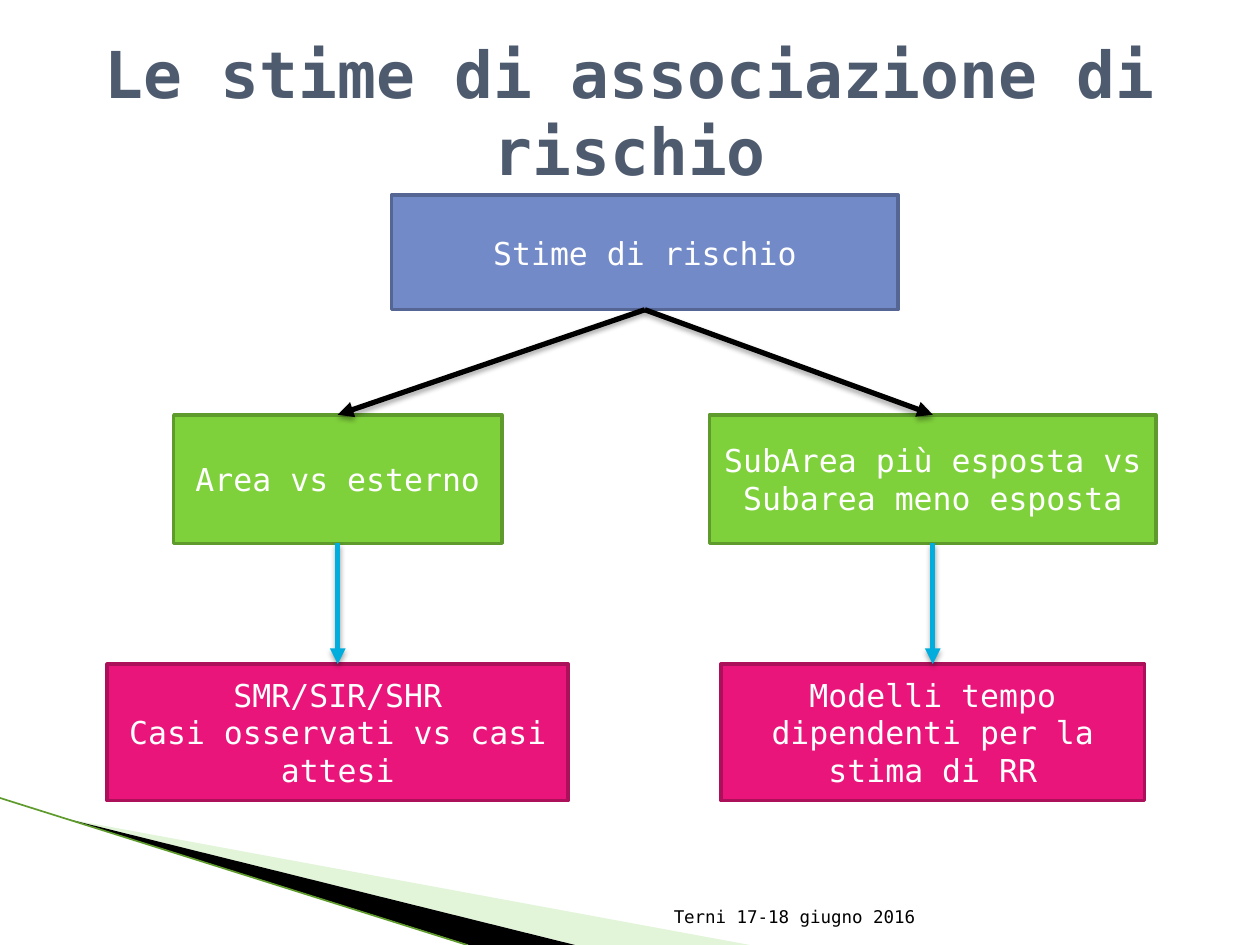
import pptx
import pptx.util
import pptx.dml.color
import pptx.enum.shapes
import pptx.enum.text
import pptx.oxml
import pptx.oxml.ns

Pt = pptx.util.Pt
ALIGN = pptx.enum.text.PP_ALIGN
ANCHOR = pptx.enum.text.MSO_ANCHOR
FONT = "DejaVu Sans Mono"
TOP, BOTTOM = 0, 2  # connection sites of a rectangle

COLORS = {
    "title": "4E5B6F", "black": "000000", "white": "FFFFFF",
    "root": "738AC8", "root_edge": "556694",
    "area": "7FD13B", "area_edge": "5E9B2C",
    "method": "EA157A", "method_edge": "AD105A",
    "arrow": "00ADDC", "band": "B8E7A1", "band_edge": "5E9B2C",
}


def rgb(name):
    return pptx.dml.color.RGBColor.from_string(COLORS[name])


def xml(markup):
    """Parse a drawing element, declaring its namespace."""
    tag_end = min(i for i in (markup.find(c) for c in " />") if i > 0)
    return pptx.oxml.parse_xml(
        markup[:tag_end] + " " + pptx.oxml.ns.nsdecls("a") + markup[tag_end:])


def write(shape, lines, size, color, align, anchor, bold=False):
    frame = shape.text_frame
    frame.word_wrap = True
    frame.vertical_anchor = anchor
    for i, line in enumerate(lines):
        paragraph = frame.paragraphs[0] if i == 0 else frame.add_paragraph()
        paragraph.alignment = align
        run = paragraph.add_run()
        run.text = line
        run.font.name = FONT
        run.font.size = Pt(size)
        run.font.bold = bold
        run.font.color.rgb = rgb(color)


def add_text(slide, box, *style, **options):
    label = slide.shapes.add_textbox(*map(Pt, box))
    write(label, *style, **options)


def add_node(slide, kind, center, top, width, height, lines):
    node = slide.shapes.add_shape(
        pptx.enum.shapes.MSO_SHAPE.RECTANGLE,
        Pt(center - width / 2), Pt(top), Pt(width), Pt(height))
    node.shadow.inherit = False
    node.fill.solid()
    node.fill.fore_color.rgb = rgb(kind)
    node.line.color.rgb = rgb(kind + "_edge")
    node.line.width = Pt(2)
    write(node, lines, 18, "white", ALIGN.CENTER, ANCHOR.MIDDLE)
    return node


def add_line(slide, start, end, color, width):
    line = slide.shapes.add_connector(
        pptx.enum.shapes.MSO_CONNECTOR.STRAIGHT, *map(Pt, start + end))
    line.line.color.rgb = rgb(color)
    line.line.width = Pt(width)
    return line


def add_arrow(slide, parent, child, color):
    arrow = add_line(slide, (0, 0), (0, 0), color, 3)
    arrow.begin_connect(parent, BOTTOM)
    arrow.end_connect(child, TOP)
    arrow.line._get_or_add_ln().append(xml('<a:tailEnd type="triangle"/>'))
    arrow._element.spPr.append(xml(
        f'<a:effectLst><a:outerShdw blurRad="{Pt(3.1)}" dist="{Pt(1.8)}" '
        'dir="5400000" rotWithShape="0"><a:srgbClr val="000000">'
        '<a:alpha val="35000"/></a:srgbClr></a:outerShdw></a:effectLst>'))


def add_wedge(slide, points, color, opacity=None):
    builder = slide.shapes.build_freeform(
        Pt(points[0][0]), Pt(points[0][1]), scale=1.0)
    builder.add_line_segments([(Pt(x), Pt(y)) for x, y in points[1:]])
    wedge = builder.convert_to_shape()
    wedge.shadow.inherit = False
    wedge.fill.solid()
    wedge.fill.fore_color.rgb = rgb(color)
    wedge.line.fill.background()
    if opacity:
        fill_color = wedge._element.spPr.find(".//" + pptx.oxml.ns.qn("a:srgbClr"))
        fill_color.append(xml(f'<a:alpha val="{opacity * 1000}"/>'))


def corner_decoration(slide, left, top, width, height):
    """Wedges fanning out from the left edge to the bottom edge."""
    bottom = top + height
    tip = (left + 38.5, top + 12)
    middle, right = left + 328.5, left + width
    add_wedge(slide, [tip, (right, bottom), (middle, bottom)], "band", 40)
    add_wedge(slide, [tip, (middle, bottom), (left + 268, bottom)], "black")
    edge = add_line(slide, (left, top), (left + 267, bottom), "band_edge", 0.95)
    edge._element.spPr.append(xml("<a:effectLst/>"))


def risk_tree(slide, left, top, width, height):
    """Root, two comparisons below it, and the method used for each."""
    root = add_node(slide, "root", left + 307.5, top, 289.5, 65.5,
                    ["Stime di rischio"])
    method_height = 78
    method_top = top + height - method_height
    branches = [
        (left + 132, 187.5, ["Area vs esterno"],
         263.5, ["SMR/SIR/SHR", "Casi osservati vs casi attesi"]),
        (left + width - 127.5, 255, ["SubArea più esposta vs Subarea meno esposta"],
         242, ["Modelli tempo dipendenti per la stima di RR"]),
    ]
    for center, area_width, area_lines, method_width, method_lines in branches:
        area = add_node(slide, "area", center, top + 125.5, area_width, 73.5, area_lines)
        method = add_node(slide, "method", center, method_top, method_width,
                          method_height, method_lines)
        add_arrow(slide, root, area, "black")
        add_arrow(slide, area, method, "arrow")


def main():
    deck = pptx.Presentation()
    deck.slide_width, deck.slide_height = Pt(720), Pt(540)
    slide = deck.slides.add_slide(deck.slide_layouts[6])

    corner_decoration(slide, 0, 456, 428.5, 84)
    # Footer
    add_text(slide, (345, 504.5, 185, 29), ["Terni 17-18 giugno 2016"],
             10, "black", ALIGN.RIGHT, ANCHOR.BOTTOM)
    # Title
    add_text(slide, (36, 21.5, 648, 84), ["Le stime di associazione di rischio"],
             36.9, "title", ALIGN.CENTER, ANCHOR.MIDDLE, bold=True)
    risk_tree(slide, 61, 111.5, 599.5, 346)

    deck.save("out.pptx")


if __name__ == "__main__":
    main()
